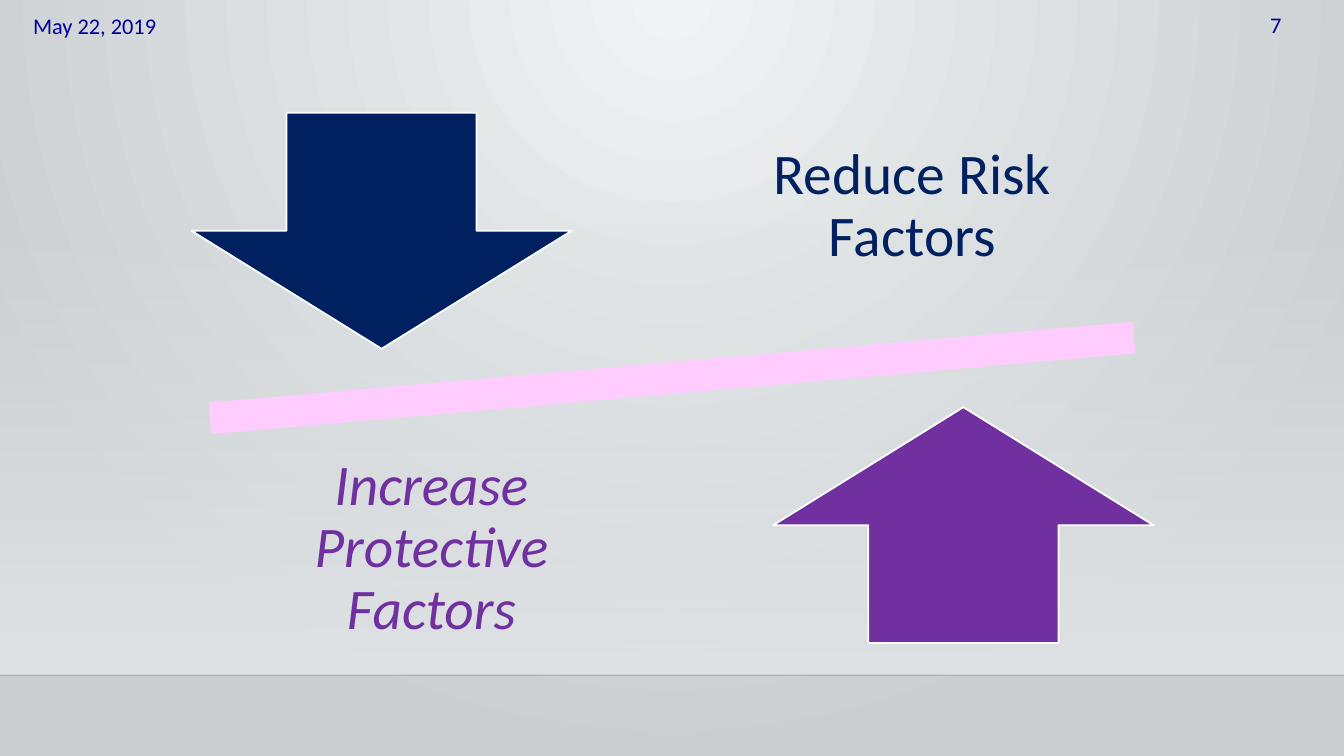
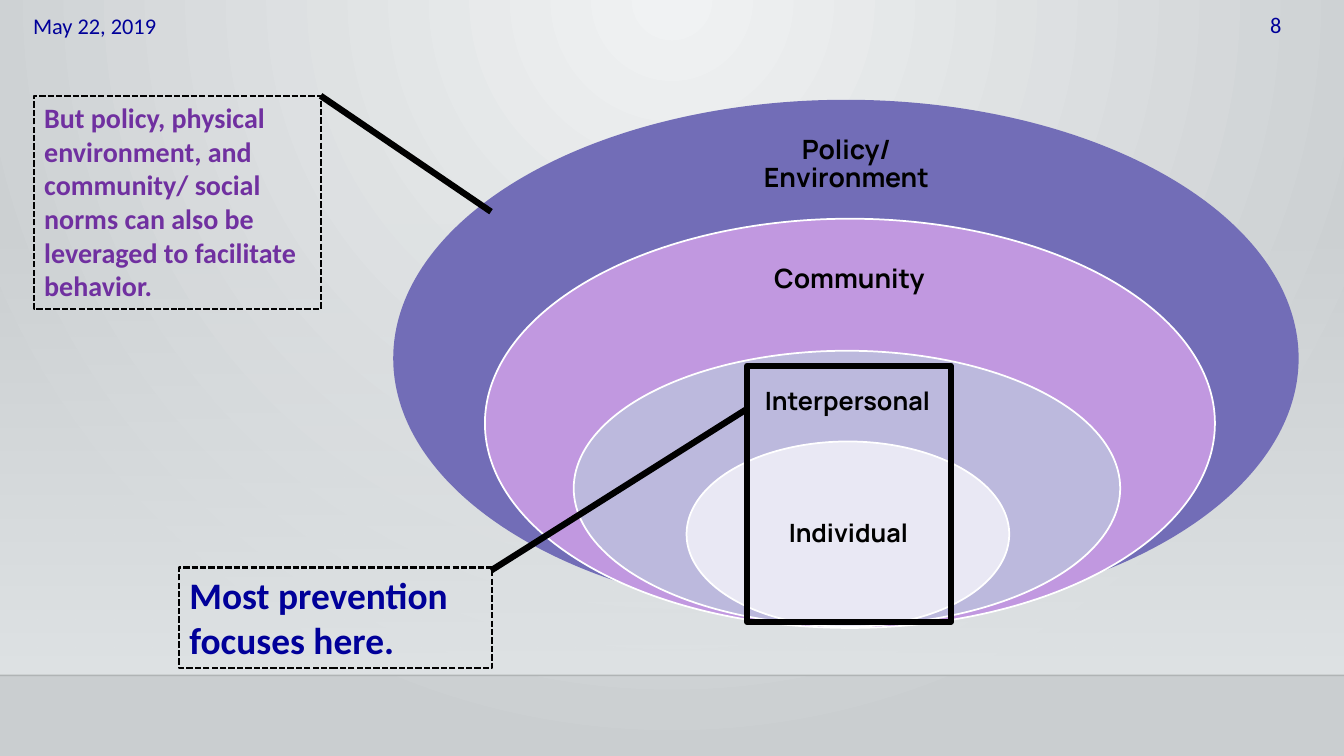
from lxml.etree import SubElement
from pptx import Presentation
from pptx.dml.color import RGBColor
from pptx.enum.dml import MSO_LINE
from pptx.enum.shapes import MSO_CONNECTOR, MSO_SHAPE
from pptx.enum.text import MSO_ANCHOR, PP_ALIGN
from pptx.oxml.ns import qn
from pptx.util import Inches, Pt

WIDTH, HEIGHT = 13.33, 7.5
FLOOR_TOP = 6.7
BODY_FONT, RING_FONT = "Calibri", "Manrope"

BLACK = RGBColor(0x00, 0x00, 0x00)
WHITE = RGBColor(0xFF, 0xFF, 0xFF)
BLUE = RGBColor(0x00, 0x00, 0x99)
NAVY = RGBColor(0x00, 0x20, 0x60)
PURPLE = RGBColor(0x70, 0x30, 0xA0)
PINK = RGBColor(0xFF, 0xCC, 0xFF)
PALE_GREY = RGBColor(0xF0, 0xF2, 0xF3)
MID_GREY = RGBColor(0xCA, 0xCE, 0xD0)
BAND_GREY = RGBColor(0xDF, 0xE3, 0xE5)

DATE = "May 22, 2019"
FIRST_NUMBER = 7

SEESAW = (0.42, 3.12, 12.49, 1.26)
SEESAW_TILT = -5
ARROW_SIZE = (3.77, 2.34)
LABEL_SIZE = (4.02, 2.46)
# arrow shape, arrow corner, label, label corner, colour, italic
FACTORS = [
    (MSO_SHAPE.DOWN_ARROW, (1.9, 1.12), "Reduce Risk Factors", (7.04, 0.82), NAVY, False),
    (MSO_SHAPE.UP_ARROW, (7.67, 4.04), "Increase Protective Factors", (2.27, 4.22), PURPLE, True),
]

# label, ellipse, label box, fill, outline, text size, inset
RINGS = [
    ("Policy/ Environment", (3.9, 0.99, 8.98, 5.13), (7.14, 1.25, 2.51, 0.77),
     RGBColor(0x72, 0x6D, 0xB7), None, 19, 0.15),
    ("Community", (4.81, 2.17, 7.24, 4.06), (7.16, 2.41, 2.53, 0.73),
     RGBColor(0xC1, 0x98, 0xE0), WHITE, 19, 0.15),
    ("Interpersonal", (5.69, 3.48, 5.42, 2.73), (7.14, 3.68, 2.53, 0.62),
     RGBColor(0xBC, 0xB9, 0xDD), WHITE, 18, 0.14),
    ("Individual", (6.81, 4.38, 3.2, 1.84), (7.28, 4.84, 2.27, 0.92),
     RGBColor(0xE9, 0xE8, 0xF4), WHITE, 18, 0.14),
]
FOCUS_FRAME = (7.41, 3.63, 2.02, 2.54)
# text, box, size, colour, pointer start, pointer end
CALLOUTS = [
    ("Most prevention focuses here.", (1.78, 5.63, 3.1, 1), 26.7, BLUE,
     (7.42, 4.05), (4.87, 5.66)),
    ("But policy, physical environment, and community/ social norms can also be "
     "leveraged to facilitate behavior.", (0.34, 0.95, 2.84, 2.12), 20, PURPLE,
     (4.87, 2.1), (3.18, 0.95)),
]


def inches(values):
    return [Inches(value) for value in values]


def add_shape(page, kind, place, fill=None, line=None, weight=1.25):
    shape = page.shapes.add_shape(kind, *inches(place))
    shape.shadow.inherit = False
    if fill is None:
        shape.fill.background()
    else:
        shape.fill.solid()
        shape.fill.fore_color.rgb = fill
    if line is None:
        shape.line.fill.background()
    else:
        shape.line.color.rgb = line
        shape.line.width = Pt(weight)
    return shape


def write(shape, text, size, color, font=BODY_FONT, bold=False, italic=False,
          align=PP_ALIGN.LEFT, anchor=MSO_ANCHOR.TOP):
    frame = shape.text_frame
    frame.word_wrap = True
    frame.vertical_anchor = anchor
    para = frame.paragraphs[0]
    para.text = text
    para.alignment = align
    para.font.name, para.font.size = font, Pt(size)
    para.font.bold, para.font.italic = bold, italic
    para.font.color.rgb = color


def add_text(page, place, *args, **style):
    box = page.shapes.add_textbox(*inches(place))
    write(box, *args, **style)
    return box


def add_label(page, place, inset, *args, **style):
    """Add a centred label with even insets and tight lines."""
    box = add_text(page, place, *args, align=PP_ALIGN.CENTER, anchor=MSO_ANCHOR.MIDDLE, **style)
    frame = box.text_frame
    frame.margin_left = frame.margin_right = Inches(inset)
    frame.margin_top = frame.margin_bottom = Inches(inset)
    frame.paragraphs[0].line_spacing = 0.9


def add_line(page, start, end, color, weight):
    line = page.shapes.add_connector(MSO_CONNECTOR.STRAIGHT, *inches(start + end))
    line.line.color.rgb = color
    line.line.width = Pt(weight)
    SubElement(line.element.spPr, qn("a:effectLst"))
    return line


def set_gradient(fill, first, last):
    fill.gradient()
    for stop, color in zip(fill.gradient_stops, (first, last)):
        stop.color.rgb = color


def set_alpha(element, percent):
    """Make the first colour inside the element partly transparent."""
    color = next(element.iter(qn("a:srgbClr")))
    SubElement(color, qn("a:alpha"), val=str(percent * 1000))


def style_background(master):
    set_gradient(master.background.fill, PALE_GREY, MID_GREY)
    gradient = next(master.element.iter(qn("a:gradFill")))
    gradient.remove(gradient.find(qn("a:lin")))
    circle = SubElement(gradient, qn("a:path"), path="circle")
    SubElement(circle, qn("a:fillToRect"), l="43000", t="0", r="43000", b="100000")


def add_page(deck):
    """Add a slide with the band, floor line, date and number."""
    page = deck.slides.add_slide(deck.slide_layouts[6])
    band = add_shape(page, MSO_SHAPE.RECTANGLE, (0, 2.21, WIDTH, FLOOR_TOP - 2.21))
    set_gradient(band.fill, BAND_GREY, BAND_GREY)
    band.fill.gradient_angle = 270
    set_alpha(band.element.spPr.find(qn("a:gradFill")), 0)
    floor = add_line(page, (0, FLOOR_TOP), (WIDTH, FLOOR_TOP), BLACK, 1)
    set_alpha(floor.element.spPr.find(qn("a:ln")), 20)
    number = FIRST_NUMBER + len(deck.slides) - 1
    add_text(page, (0.23, 0.07, 2.38, 0.34), DATE, 16, BLUE)
    add_text(page, (12.5, 0.06, 0.6, 0.42), str(number), 16, BLUE)
    return page


def build_balance(deck):
    page = add_page(deck)
    seesaw = add_shape(page, MSO_SHAPE.MATH_MINUS, SEESAW, PINK, PINK)
    seesaw.rotation = SEESAW_TILT
    for kind, arrow_at, text, label_at, color, italic in FACTORS:
        add_shape(page, kind, arrow_at + ARROW_SIZE, color, WHITE)
        add_label(page, label_at + LABEL_SIZE, 0.32, text, 41, color, italic=italic)


def build_rings(deck):
    page = add_page(deck)
    for text, ellipse, label, fill, line, size, inset in RINGS:
        add_shape(page, MSO_SHAPE.OVAL, ellipse, fill, line)
        add_label(page, label, inset, text, size, BLACK, font=RING_FONT, bold=True)
    add_shape(page, MSO_SHAPE.RECTANGLE, FOCUS_FRAME, line=BLACK, weight=4.5)
    for text, place, size, color, start, end in CALLOUTS:
        add_line(page, start, end, BLACK, 4.5)
        box = add_shape(page, MSO_SHAPE.RECTANGLE, place, line=BLACK, weight=1.5)
        box.line.dash_style = MSO_LINE.SQUARE_DOT
        write(box, text, size, color, bold=True)


def main():
    deck = Presentation()
    deck.slide_width, deck.slide_height = Inches(WIDTH), Inches(HEIGHT)
    style_background(deck.slide_master)
    build_balance(deck)
    build_rings(deck)
    deck.save("out.pptx")


if __name__ == "__main__":
    main()
